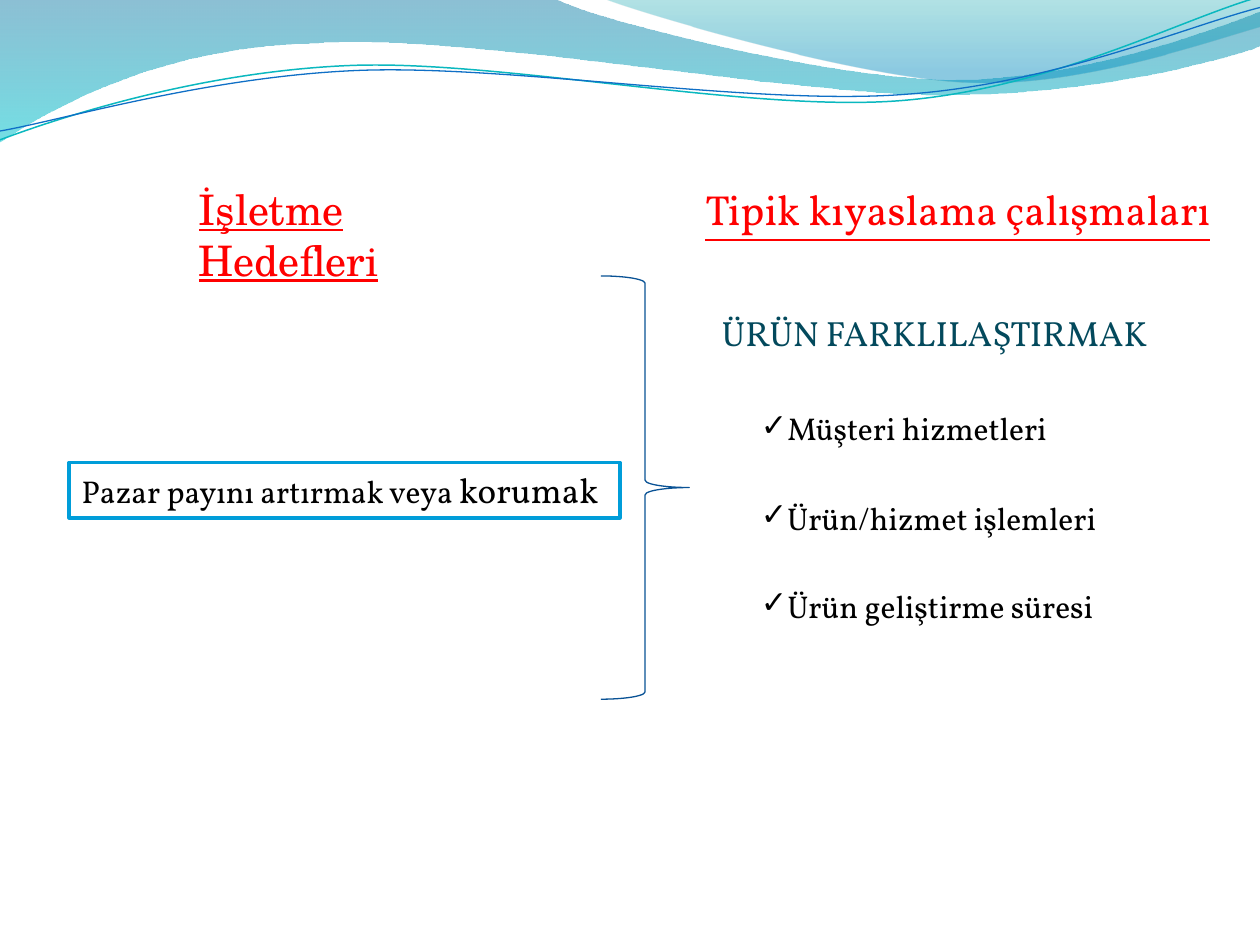
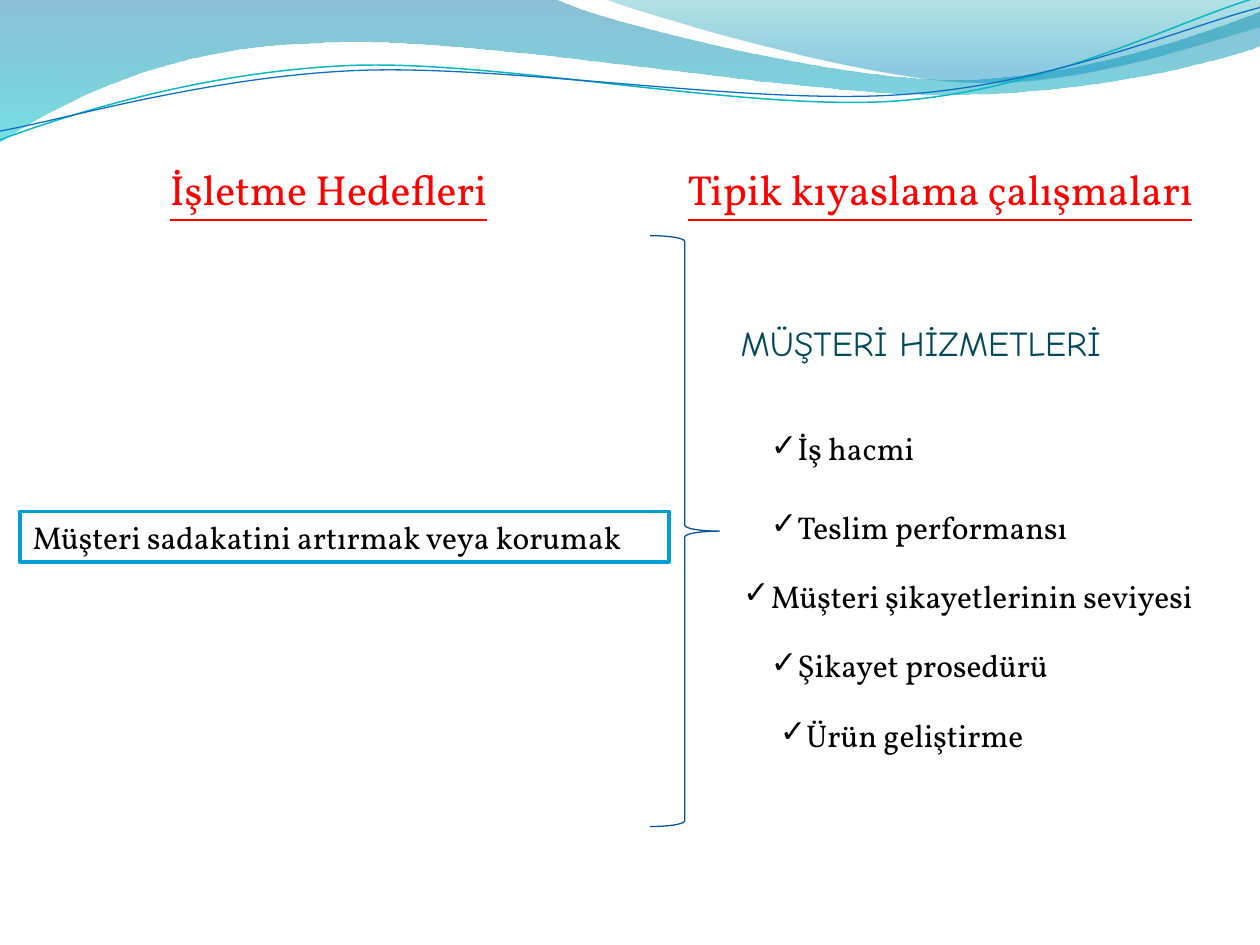
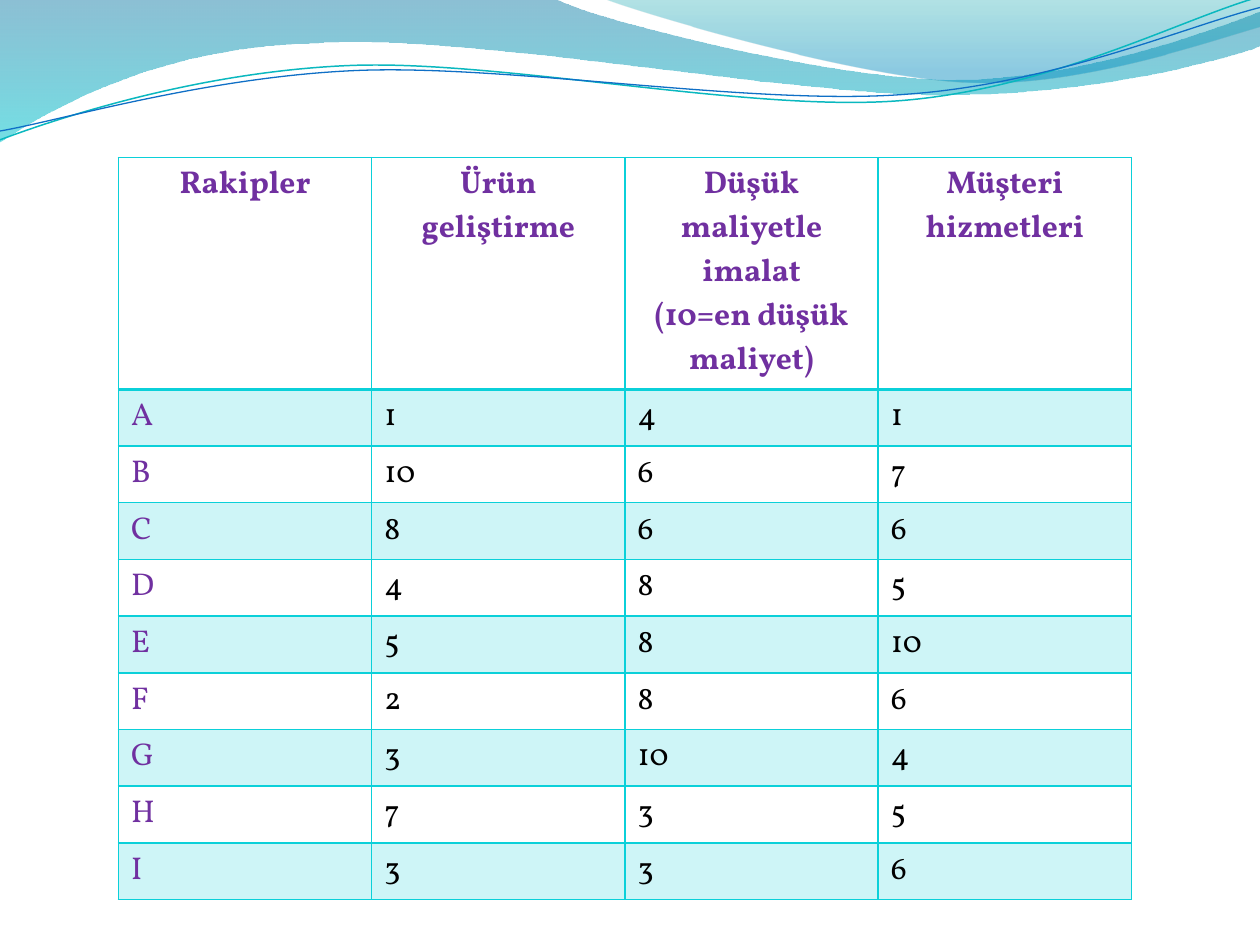
import dataclasses
import math

import pptx
import pptx.dml.color
import pptx.enum.shapes
import pptx.enum.text
import pptx.oxml
import pptx.oxml.ns
import pptx.util
from pptx.util import Inches


@dataclasses.dataclass(frozen=True)
class Theme:
    heading: str = "FF0000"
    topic: str = "03495C"
    body: str = "000000"
    competitor: str = "7030A0"
    paper: str = "FFFFFF"
    goal_border: str = "009DD9"
    brace: str = "095295"
    grid: str = "0BD0D9"
    font: str = "Vollkorn"
    heading_size: int = 24
    topic_size: int = 20
    body_size: int = 18


theme = Theme()
rgb = pptx.dml.color.RGBColor.from_string
qn = pptx.oxml.ns.qn


def write(paragraph, text, size, color, font=theme.font, **extras):
    """Add one formatted run to a paragraph."""
    run = paragraph.add_run()
    run.text = text
    run.font.color.rgb = rgb(color)
    formats = {"name": font, "size": pptx.util.Pt(size), **extras}
    for attribute, value in formats.items():
        setattr(run.font, attribute, value)


def fit_text(shape):
    """Let a shape grow with its text and return the first paragraph."""
    formats = {
        "word_wrap": True,
        "auto_size": pptx.enum.text.MSO_AUTO_SIZE.SHAPE_TO_FIT_TEXT,
        "vertical_anchor": pptx.enum.text.MSO_ANCHOR.TOP,
    }
    for attribute, value in formats.items():
        setattr(shape.text_frame, attribute, value)
    paragraph = shape.text_frame.paragraphs[0]
    paragraph.alignment = pptx.enum.text.PP_ALIGN.LEFT
    return paragraph


prs = pptx.Presentation()
prs.slide_width, prs.slide_height = Inches(10), Inches(7.5)
layout = prs.slide_layouts[6]
for placeholder in list(layout.placeholders):
    layout.shapes.element.remove(placeholder.element)
market_slide, loyalty_slide, rivals_slide = [
    prs.slides.add_slide(layout) for _ in range(3)]

# Waves: two numbers make a straight edge, six make a Bezier curve
waves = [
    {"start": (0, 0),
     "edges": [(4.4, -0.01), (4.76, 0.17, 6.64, 0.63, 7.58, 0.63),
               (8.53, 0.63, 9.58, 0.26, 10, 0.09), (10.01, 0.36),
               (9.83, 0.44, 8.7, 0.76, 7.46, 0.75),
               (6.22, 0.75, 3.82, 0.28, 2.57, 0.34),
               (1.29, 0.36, 0.46, 0.83, -0.01, 1.13)],
     "stops": [(0, "0074A1", 45), (1, "00C6CF", 55)]},
    {"start": (4.79, -0.01),
     "edges": [(5.09, 0.11, 6.82, 0.62, 7.69, 0.65),
               (8.56, 0.69, 9.61, 0.32, 10, 0.21), (10, 0)],
     "stops": [(0, "00A1A9", 30), (0.8, "008BBF", 45)]},
    {"start": (0, 1.11),
     "edges": [(0.48, 0.93, 1.58, 0.57, 2.77, 0.52),
               (3.95, 0.47, 5.93, 0.89, 7.13, 0.8),
               (8.33, 0.71, 9.38, 0.15, 9.98, -0.02)],
     "line": ("0AB8BF", 0.85), "center": (4.99, 0.57)},
    {"start": (0, 1.04),
     "edges": [(0.47, 0.96, 1.64, 0.61, 2.83, 0.56),
               (4.03, 0.51, 5.97, 0.84, 7.17, 0.75),
               (8.36, 0.67, 9.41, 0.21, 10, 0.06)],
     "line": ("0F6FC6", 0.75), "center": (5, 0.59)},
]
tilt = 2.7
cos, sin = math.cos(math.radians(tilt)), math.sin(math.radians(tilt))
for wave in waves:
    outline = [wave["start"]]
    for edge in wave["edges"]:
        outline += zip(edge[::2], edge[1::2])
    if "center" in wave:
        # Level the line; the shape's rotation tilts it again
        cx, cy = wave["center"]
        outline = [(cx + (x - cx) * cos - (y - cy) * sin,
                    cy + (x - cx) * sin + (y - cy) * cos) for x, y in outline]
    points = [(Inches(x), Inches(y)) for x, y in outline]
    builder = market_slide.shapes.build_freeform(*points[0])
    builder.add_line_segments(points[1:], close="stops" in wave)
    ribbon = builder.convert_to_shape()
    ribbon.shadow.inherit = False

    # Join each three control points into one curve
    segments = iter(list(ribbon.element.iter(qn("a:lnTo"))))
    for edge in wave["edges"]:
        segment = next(segments)
        if len(edge) == 6:
            curve = segment.makeelement(qn("a:cubicBezTo"), {})
            segment.addprevious(curve)
            for part in (segment, next(segments), next(segments)):
                curve.append(part[0])
                part.getparent().remove(part)

    if "stops" in wave:
        ribbon.line.fill.background()
        ribbon.fill.gradient()
        ribbon.fill.gradient_angle = 270
        for stop, (position, color, _) in zip(ribbon.fill.gradient_stops, wave["stops"]):
            stop.position = position
            stop.color.rgb = rgb(color)
        tints = list(ribbon.element.spPr.iter(qn("a:srgbClr")))
        for tint, (_, _, opacity) in zip(tints, wave["stops"]):
            tint.append(tint.makeelement(qn("a:alpha"), {"val": str(opacity * 1000)}))
    else:
        color, weight = wave["line"]
        ribbon.rotation = 360 - tilt
        ribbon.fill.background()
        ribbon.line.color.rgb = rgb(color)
        ribbon.line.width = pptx.util.Pt(weight)
    # The layout carries the waves for every slide
    layout.shapes.element.append(ribbon.element)

# Goal slides: a business goal, a brace and the matching benchmarks
goals_heading = "İşletme Hedefleri"
studies_heading = "Tipik kıyaslama çalışmaları"
goal_slides = [
    {"slide": market_slide,
     "headings": [(goals_heading, "TeX Gyre Schola", 1.48, 1.41, 2.79),
                  (studies_heading, theme.font, 5.5, 1.41, 4.32)],
     "goal": [("Pazar payını artırmak veya ", theme.body_size),
              ("korumak", theme.topic_size)],
     "goal_at": (0.55, 3.67, 4.37, 0.44),
     "brace_at": (4.77, 2.19, 0.7, 3.36),
     "topic": ("ÜRÜN FARKLILAŞTIRMAK", theme.font, 5.63, 2.42, 3.74),
     "studies": [("Müşteri hizmetleri", 5.94, 3.2, 2.48, 0),
                 ("Ürün/hizmet işlemleri", 5.94, 3.91, 2.97, 0),
                 ("Ürün geliştirme süresi", 5.94, 4.61, 2.89, 0)]},
    {"slide": loyalty_slide,
     "headings": [(goals_heading, theme.font, 1.25, 1.25, 2.79),
                  (studies_heading, theme.font, 5.36, 1.25, 4.32)],
     "goal": [("Müşteri sadakatini artırmak veya korumak", theme.body_size)],
     "goal_at": (0.16, 4.06, 5.15, 0.4),
     "brace_at": (5.16, 1.87, 0.55, 4.69),
     "topic": ("MÜŞTERİ HİZMETLERİ", "Comic Neue", 5.78, 2.5, 3.47),
     "studies": [("İş hacmi", 6.02, 3.36, 1.35, 0),
                 ("Teslim performansı", 6.02, 3.98, 2.67, 0),
                 ("Müşteri şikayetlerinin seviyesi", 5.52, 4.53, 4.29, 1),
                 ("Şikayet prosedürü", 6.02, 5.08, 2.43, 0),
                 ("Ürün geliştirme", 6.09, 5.63, 2.22, 0)]},
]
for content in goal_slides:
    shapes = content["slide"].shapes

    # Headings
    for text, font, left, top, width in content["headings"]:
        heading = shapes.add_textbox(Inches(left), Inches(top), Inches(width), Inches(0.5))
        write(fit_text(heading), text, theme.heading_size, theme.heading, font, underline=True)

    # Goal and brace
    goal = shapes.add_shape(pptx.enum.shapes.MSO_SHAPE.RECTANGLE,
                            *map(Inches, content["goal_at"]))
    goal.shadow.inherit = False
    goal.fill.solid()
    goal.fill.fore_color.rgb = rgb(theme.paper)
    goal.line.color.rgb = rgb(theme.goal_border)
    goal.line.width = pptx.util.Pt(2)
    goal_line = fit_text(goal)
    for text, size in content["goal"]:
        write(goal_line, text, size, theme.body)

    brace = shapes.add_shape(pptx.enum.shapes.MSO_SHAPE.RIGHT_BRACE,
                             *map(Inches, content["brace_at"]))
    brace.shadow.inherit = False
    brace.fill.background()
    brace.line.color.rgb = rgb(theme.brace)
    brace.line.width = pptx.util.Pt(0.75)

    # Topic and its ticked studies
    text, font, left, top, width = content["topic"]
    topic = shapes.add_textbox(Inches(left), Inches(top), Inches(width), Inches(0.44))
    write(fit_text(topic), text, theme.topic_size, theme.topic, font)
    for text, left, top, width, level in content["studies"]:
        study = shapes.add_textbox(Inches(left), Inches(top), Inches(width), Inches(0.4))
        study_line = fit_text(study)
        write(study_line, text, theme.body_size, theme.body)
        study_line.level = level
        properties = study_line._p.get_or_add_pPr()
        properties.set("marL", str(Inches(0.5) * level))
        properties.set("indent", str(Inches(-0.22) * level))
        for tag, attributes in {"a:buFont": {"typeface": theme.font},
                                "a:buChar": {"char": "✓"}}.items():
            properties.append(properties.makeelement(qn(tag), attributes))

# Competitor scores
headers = ["Rakipler", "Ürün geliştirme",
           "Düşük maliyetle imalat\n(10=en düşük maliyet)", "Müşteri hizmetleri"]
scores = {"A": (1, 4, 1), "B": (10, 6, 7), "C": (8, 6, 6),
          "D": (4, 8, 5), "E": (5, 8, 10), "F": (2, 8, 6),
          "G": (3, 10, 4), "H": (7, 3, 5), "I": (3, 3, 6)}
rows = [headers] + [[rival, *map(str, marks)] for rival, marks in scores.items()]
header_height, score_height = 1.84, 0.45
rivals = rivals_slide.shapes.add_table(
    len(rows), len(headers), Inches(0.94), Inches(1.25), Inches(8.05),
    Inches(header_height + score_height * len(scores))).table
rivals.first_row = rivals.horz_banding = False
for column in rivals.columns:
    column.width = Inches(2.01)
for row_index, row in enumerate(rows):
    is_header = row_index == 0
    rivals.rows[row_index].height = Inches(header_height if is_header else score_height)
    for column_index, text in enumerate(row):
        cell = rivals.cell(row_index, column_index)
        is_purple = is_header or column_index == 0
        for line_index, line in enumerate(text.split("\n")):
            frame = cell.text_frame
            paragraph = frame.add_paragraph() if line_index else frame.paragraphs[0]
            if is_header:
                paragraph.alignment = pptx.enum.text.PP_ALIGN.CENTER
            write(paragraph, line, theme.body_size,
                  theme.competitor if is_purple else theme.body, bold=is_header)

        # Borders, with a heavier rule under the header
        cell_properties = cell._tc.get_or_add_tcPr()
        for side in "LRTB":
            heavy = (is_header and side == "B") or (row_index == 1 and side == "T")
            cell_properties.append(pptx.oxml.parse_xml(
                f'<a:ln{side} {pptx.oxml.ns.nsdecls("a")} w="{pptx.util.Pt(2 if heavy else 1)}">'
                f'<a:solidFill><a:srgbClr val="{theme.grid}"/></a:solidFill></a:ln{side}>'))

        # Every other competitor is tinted
        if row_index % 2:
            cell.fill.solid()
            cell.fill.fore_color.rgb = rgb(theme.grid)
            tint = cell_properties.find(qn("a:solidFill")).find(qn("a:srgbClr"))
            tint.append(tint.makeelement(qn("a:alpha"), {"val": "20000"}))
        else:
            cell.fill.background()

prs.save("out.pptx")
